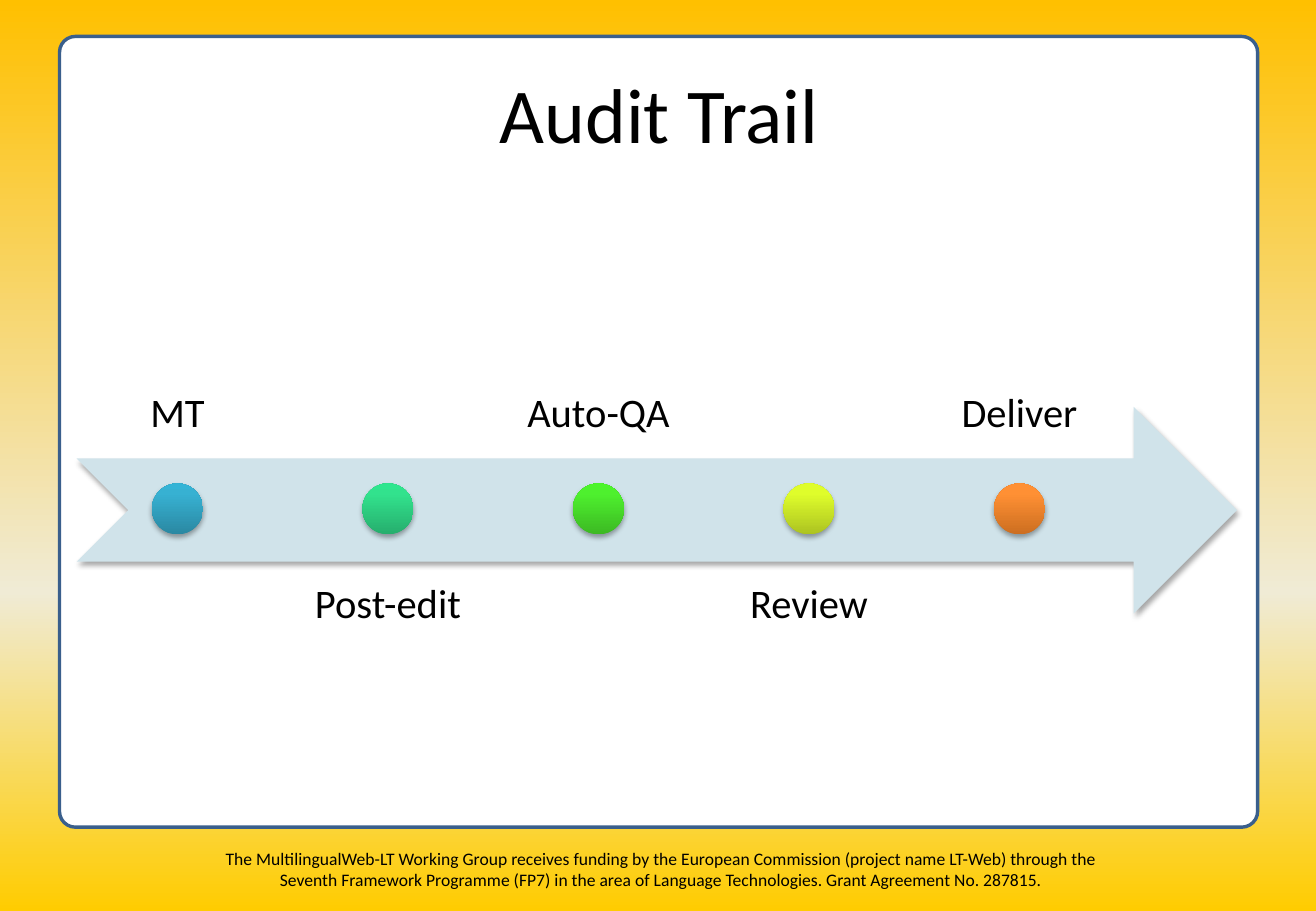
from dataclasses import dataclass

from lxml import etree
from pptx import Presentation
from pptx.dml.color import RGBColor
from pptx.enum import shapes, text
from pptx.oxml import ns
from pptx.util import Inches, Pt


@dataclass(frozen=True)
class Theme:
    font: str = "Calibri"
    ink: str = "000000"
    panel: str = "FFFFFF"
    border: str = "3A5F8C"
    arrow: str = "D0E3EA"
    backdrop: tuple = ((0, "FFC000"), (65, "F0EBD5"), (100, "FFCC00"))
    title_size: float = 46
    label_size: float = 24
    footer_size: float = 10.4


theme = Theme()
steps = [
    ("MT", "2A88A2", "37B1D2", "34B4D6"),
    ("Post-edit", "26AE6D", "32E28D", "2EE68E"),
    ("Auto-QA", "3CB923", "4EF02E", "4CF52A"),
    ("Review", "ACC321", "DFFD2B", "E1FF2B"),
    ("Deliver", "CC6E20", "FF9034", "FF9136"),
]


def add_text(area, words, size, anchor, inset=(0.1, 0.05), spacing=1.0):
    box = page.shapes.add_textbox(*map(Inches, area))
    frame = box.text_frame
    frame.word_wrap = True
    frame.vertical_anchor = anchor
    frame.margin_left = frame.margin_right = Inches(inset[0])
    frame.margin_top = frame.margin_bottom = Inches(inset[1])
    para = frame.paragraphs[0]
    para.alignment = text.PP_ALIGN.CENTER
    para.line_spacing = spacing
    span = para.add_run()
    span.text = words
    span.font.name = theme.font
    span.font.size = Pt(size)
    span.font.color.rgb = RGBColor.from_string(theme.ink)


def set_gradient(holder, stops, angle):
    gradient = etree.Element(ns.qn("a:gradFill"), rotWithShape="1")
    stop_list = etree.SubElement(gradient, ns.qn("a:gsLst"))
    for position, color in stops:
        stop = etree.SubElement(stop_list, ns.qn("a:gs"), pos=str(position * 1000))
        etree.SubElement(stop, ns.qn("a:srgbClr"), val=color)
    etree.SubElement(gradient, ns.qn("a:lin"), ang=str(angle * 60000), scaled="0")
    holder.replace(holder.find(ns.qn("a:solidFill")), gradient)


deck = Presentation()
deck.slide_width, deck.slide_height = Inches(10.83), Inches(7.5)
page = deck.slides.add_slide(deck.slide_layouts[6])
page.background.fill.solid()
page.background.fill.fore_color.rgb = RGBColor.from_string(theme.panel)
set_gradient(page.element.find(".//" + ns.qn("p:bgPr")), theme.backdrop, 90)

panel = page.shapes.add_shape(
    shapes.MSO_SHAPE.ROUNDED_RECTANGLE, Inches(0.49), Inches(0.3), Inches(9.86), Inches(6.51)
)
panel.adjustments[0] = 0.02
panel.shadow.inherit = False
panel.fill.solid()
panel.fill.fore_color.rgb = RGBColor.from_string(theme.panel)
panel.line.color.rgb = RGBColor.from_string(theme.border)
panel.line.width = Pt(2)

add_text((0.51, 0.3, 9.83, 1.25), "Audit Trail", theme.title_size, text.MSO_ANCHOR.MIDDLE)
add_text(
    (1.62, 6.93, 7.64, 0.4),
    "The MultilingualWeb-LT Working Group receives funding by the European Commission "
    "(project name LT-Web) through the Seventh Framework Programme (FP7) in the area of "
    "Language Technologies. Grant Agreement No. 287815.",
    theme.footer_size,
    text.MSO_ANCHOR.TOP,
)

arrow = page.shapes.add_shape(
    shapes.MSO_SHAPE.NOTCHED_RIGHT_ARROW, Inches(0.63), Inches(3.35), Inches(9.55), Inches(1.7)
)
arrow.fill.solid()
arrow.fill.fore_color.rgb = RGBColor.from_string(theme.arrow)
raised = [arrow]

dot_size, label_size, pitch = 0.42, 1.65, 6.93 / 4
for index, (name, dark, middle, bright) in enumerate(steps):
    center = 1.46 + index * pitch
    above = index % 2 == 0
    add_text(
        (center - label_size / 2, 2.07 if above else 4.62, label_size, 1.7),
        name,
        theme.label_size,
        text.MSO_ANCHOR.BOTTOM if above else text.MSO_ANCHOR.TOP,
        inset=(0.19, 0.19),
        spacing=0.9,
    )
    dot = page.shapes.add_shape(
        shapes.MSO_SHAPE.OVAL,
        Inches(center - dot_size / 2), Inches(3.98), Inches(dot_size), Inches(dot_size),
    )
    dot.fill.solid()
    set_gradient(dot.element.spPr, ((0, dark), (80, middle), (100, bright)), 270)
    raised.append(dot)

for shape in raised:
    shape.line.fill.background()
    shape.shadow.inherit = False
    effects = shape.element.spPr.find(ns.qn("a:effectLst"))
    shadow = etree.SubElement(
        effects, ns.qn("a:outerShdw"),
        blurRad=str(Pt(3.1)), dist=str(Pt(1.8)), dir=str(90 * 60000), rotWithShape="0",
    )
    shade = etree.SubElement(shadow, ns.qn("a:srgbClr"), val=theme.ink)
    etree.SubElement(shade, ns.qn("a:alpha"), val="35000")

deck.save("out.pptx")
